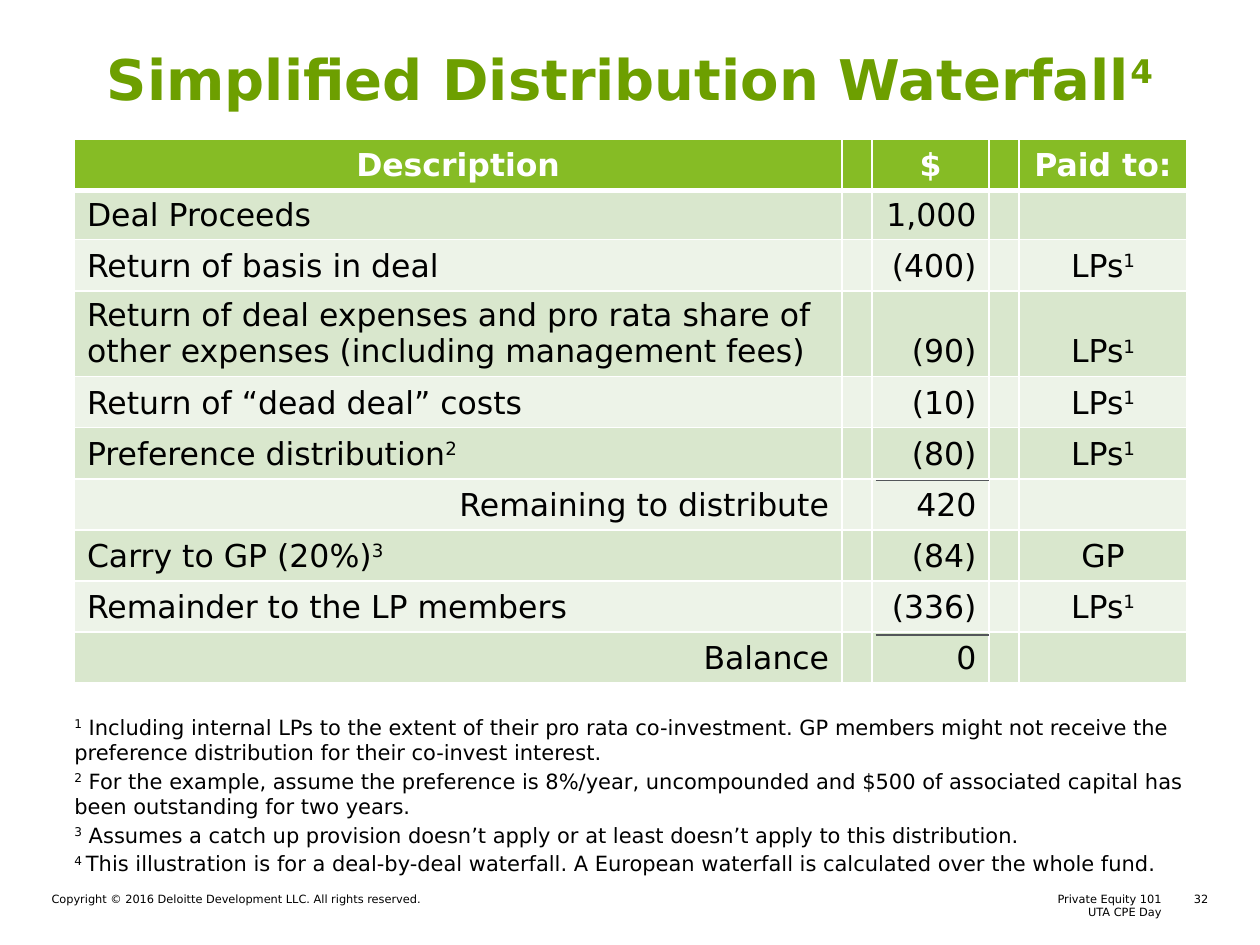
"""Build the simplified distribution waterfall slide."""
from typing import Any, NamedTuple

from lxml import etree
from pptx import Presentation
from pptx import util as u
from pptx.dml.color import RGBColor
from pptx.enum import shapes, text
from pptx.oxml import ns

FONT = "DejaVu Sans"
BLACK = RGBColor(0x00, 0x00, 0x00)
WHITE = RGBColor(0xFF, 0xFF, 0xFF)
TITLE_GREEN = RGBColor(0x6D, 0x9F, 0x00)
HEADER_GREEN = RGBColor(0x86, 0xBC, 0x25)
BAND_DARK = RGBColor(0xD9, 0xE7, 0xCD)
BAND_LIGHT = RGBColor(0xED, 0xF3, 0xE8)
RULE_GRAY = RGBColor(0x53, 0x56, 0x5A)
LEFT, CENTER, RIGHT = text.PP_ALIGN.LEFT, text.PP_ALIGN.CENTER, text.PP_ALIGN.RIGHT


class Step(NamedTuple):
    description: str
    amount: str
    payee: str = ""
    align: Any = LEFT
    height: float = 1.03


class Block(NamedTuple):
    left: float
    top: float
    width: float
    height: float
    lines: tuple[str, ...]
    size: float
    align: Any = LEFT
    color: RGBColor = BLACK
    bold: bool = False
    gap: float = 0


STEPS = (
    Step("Deal Proceeds", "1,000", height=0.99),
    Step("Return of basis in deal", "(400)", "LPs^1"),
    Step("Return of deal expenses and pro rata share of other expenses "
         "(including management fees)", "(90)", "LPs^1", height=1.73),
    Step("Return of “dead deal” costs", "(10)", "LPs^1"),
    Step("Preference distribution^2", "(80)", "LPs^1"),
    Step("Remaining to distribute", "420", align=RIGHT),
    Step("Carry to GP (20%)^3", "(84)", "GP"),
    Step("Remainder to the LP members", "(336)", "LPs^1"),
    Step("Balance", "0", align=RIGHT),
)
HEADER = Step("Description", "$", "Paid to:", CENTER, 1.04)
COLUMN_WIDTHS = (15.47, 0.58, 2.36, 0.58, 3.38)
FOOTNOTES = (
    "^1^ Including internal LPs to the extent of their pro rata co-investment. "
    "GP members might not receive the preference distribution for their co-invest interest.",
    "^2^ For the example, assume the preference is 8%/year, uncompounded and $500 of "
    "associated capital has been outstanding for two years.",
    "^3^ Assumes a catch up provision doesn’t apply or at least doesn’t apply to this distribution.",
    "^4 ^This illustration is for a deal-by-deal waterfall. "
    "A European waterfall is calculated over the whole fund.",
)
BLOCKS = (
    Block(1.04, 0.89, 23.32, 1.93, ("Simplified Distribution Waterfall^4",), 32,
          CENTER, TITLE_GREEN, True),
    Block(1.5, 14.4, 22.38, 3.3, FOOTNOTES, 12, gap=2),
    Block(1.04, 17.98, 11.15, 0.56,
          ("Copyright © 2016 Deloitte Development LLC. All rights reserved.",), 6.5),
    Block(13.21, 17.98, 10.21, 0.56, ("Private Equity 101", "UTA CPE Day"), 6.5, RIGHT),
    Block(23.72, 17.98, 0.64, 0.28, ("32",), 6.5, RIGHT),
)
TOTAL_RULES = (9.68, 12.8)


def write(paragraph: Any, content: str, *, size: float, align: Any = LEFT,
          color: RGBColor = BLACK, bold: bool = False, gap: float = 0) -> None:
    """Write text whose carets switch superscript on and off."""
    paragraph.alignment = align
    if gap:
        paragraph.space_before = u.Pt(gap)
    for index, part in enumerate(content.split("^")):
        if not part:
            continue
        run = paragraph.add_run()
        run.text = part
        run.font.name, run.font.size, run.font.bold = FONT, u.Pt(size), bold
        run.font.color.rgb = color
        if index % 2:
            run.font._element.set("baseline", "30000")


def add_block(slide: Any, block: Block) -> None:
    """Place a text box with one paragraph per line."""
    frame = slide.shapes.add_textbox(
        u.Cm(block.left), u.Cm(block.top), u.Cm(block.width), u.Cm(block.height)).text_frame
    frame.word_wrap = True
    frame.margin_left = frame.margin_right = frame.margin_top = frame.margin_bottom = 0
    for index, line in enumerate(block.lines):
        paragraph = frame.add_paragraph() if index else frame.paragraphs[0]
        write(paragraph, line, size=block.size, align=block.align, color=block.color,
              bold=block.bold, gap=block.gap if index else 0)


def set_borders(cell: Any, top: float, bottom: float) -> None:
    """Outline a cell in white."""
    properties = cell._tc.get_or_add_tcPr()
    for index, (side, width) in enumerate(
            (("lnL", 1), ("lnR", 1), ("lnT", top), ("lnB", bottom))):
        border = etree.Element(ns.qn(f"a:{side}"), w=str(u.Pt(width)))
        fill = etree.SubElement(border, ns.qn("a:solidFill"))
        etree.SubElement(fill, ns.qn("a:srgbClr"), val=str(WHITE))
        properties.insert(index, border)


def add_waterfall(slide: Any) -> None:
    """Add the table of distribution steps."""
    rows = (HEADER, *STEPS)
    table = slide.shapes.add_table(
        len(rows), len(COLUMN_WIDTHS), u.Cm(1.5), u.Cm(2.8), u.Cm(sum(COLUMN_WIDTHS)),
        u.Cm(sum(row.height for row in rows))).table
    table.horz_banding = False
    for column, width in zip(table.columns, COLUMN_WIDTHS):
        column.width = u.Cm(width)
    for index, step in enumerate(rows):
        is_header = index == 0
        table.rows[index].height = u.Cm(step.height)
        band = HEADER_GREEN if is_header else BAND_DARK if index % 2 else BAND_LIGHT
        contents = (step.description, "", step.amount, "", step.payee)
        aligns = (step.align, LEFT, CENTER if is_header else RIGHT, LEFT, CENTER)
        for cell, content, align in zip(table.rows[index].cells, contents, aligns):
            cell.fill.solid()
            cell.fill.fore_color.rgb = band
            set_borders(cell, 3 if index == 1 else 1, 3 if is_header else 1)
            cell.vertical_anchor = text.MSO_ANCHOR.BOTTOM
            if content:
                write(cell.text_frame.paragraphs[0], content, size=18, align=align,
                      color=WHITE if is_header else BLACK, bold=is_header)
            else:
                cell.margin_top = cell.margin_bottom = 0


def add_total_rule(slide: Any, top: float) -> None:
    """Draw the rule above a total in the amount column."""
    rule = slide.shapes.add_connector(
        shapes.MSO_CONNECTOR.STRAIGHT, u.Cm(17.65), u.Cm(top), u.Cm(19.94), u.Cm(top))
    rule.line.color.rgb = RULE_GRAY
    rule.line.width = u.Pt(0.75)
    etree.SubElement(rule._element.spPr, ns.qn("a:effectLst"))


def main() -> None:
    """Assemble and save the slide."""
    deck = Presentation()
    deck.slide_width, deck.slide_height = u.Cm(25.4), u.Cm(19.05)
    slide = deck.slides.add_slide(deck.slide_layouts[6])
    add_waterfall(slide)
    for block in BLOCKS:
        add_block(slide, block)
    for top in TOTAL_RULES:
        add_total_rule(slide, top)
    deck.save("out.pptx")


if __name__ == "__main__":
    main()
